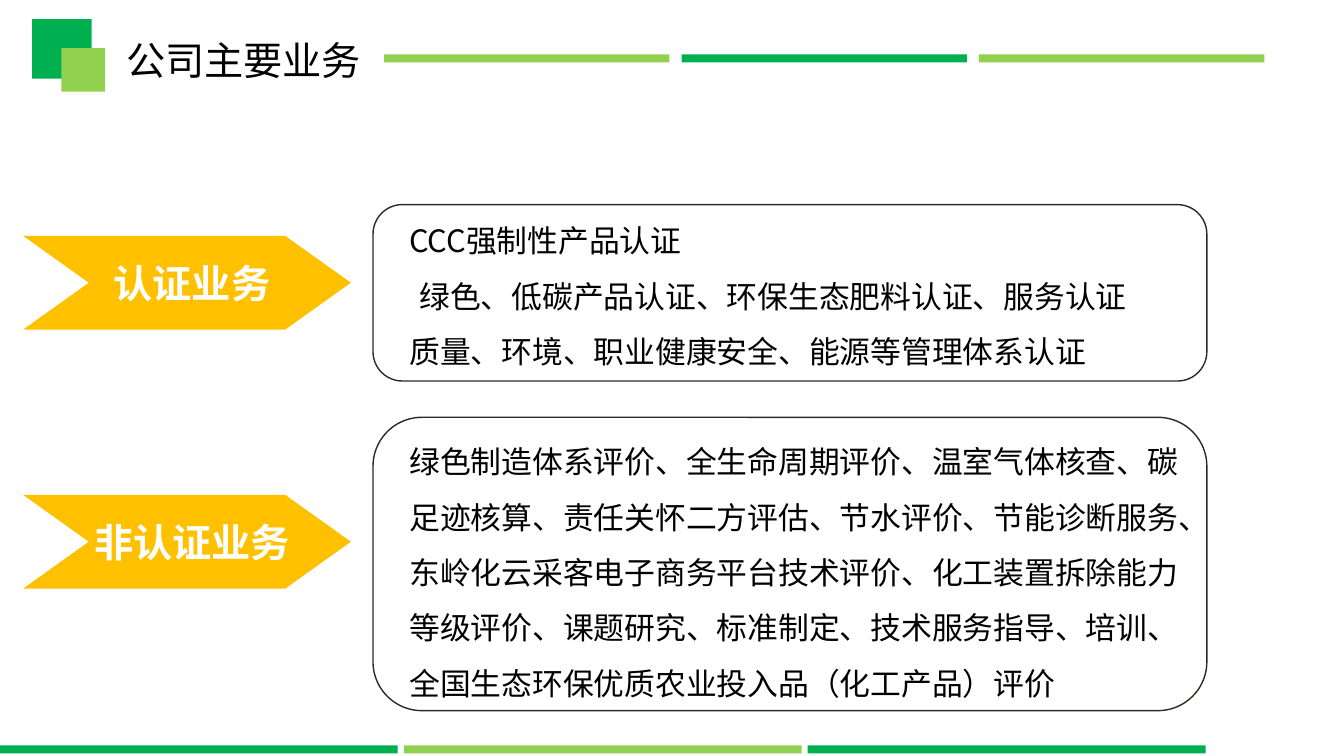
from dataclasses import dataclass

from lxml import etree
from pptx import Presentation
from pptx.dml.color import RGBColor
from pptx.enum.shapes import MSO_SHAPE
from pptx.enum.text import MSO_ANCHOR, MSO_AUTO_SIZE, PP_ALIGN
from pptx.oxml.ns import qn
from pptx.util import Inches, Pt

RECT, ROUNDED, CHEVRON = MSO_SHAPE.RECTANGLE, MSO_SHAPE.ROUNDED_RECTANGLE, MSO_SHAPE.CHEVRON
TOP, MIDDLE = MSO_ANCHOR.TOP, MSO_ANCHOR.MIDDLE
LEFT, CENTER = PP_ALIGN.LEFT, PP_ALIGN.CENTER
NO_FIT = MSO_AUTO_SIZE.NONE
SLIDE_W, SLIDE_H = 13.33, 7.5
TWO_CONTENT = 3


@dataclass(frozen=True)
class Theme:
    font: str = "Noto Sans CJK SC"
    dark_green: str = "00B050"
    light_green: str = "92D050"
    amber: str = "FFC000"
    white: str = "FFFFFF"
    ink: str = "000000"
    outline: str = "2C2A24"
    heading_size: int = 28
    body_size: int = 22
    line_spacing: float = 1.5


@dataclass(frozen=True)
class Box:
    left: float
    top: float
    width: float
    height: float

    def lengths(self):
        return [Inches(v) for v in (self.left, self.top, self.width, self.height)]


THEME = Theme()
# Each service: label, chevron top, card top and height, text top, lines with their indents
SERVICES = [
    ("认证业务", 2.34, 2.03, 1.75, 1.95, [
        ("CCC强制性产品认证", 0),
        ("绿色、低碳产品认证、环保生态肥料认证、服务认证", 0.1),
        ("质量、环境、职业健康安全、能源等管理体系认证", 0)]),
    ("非认证业务", 4.91, 4.14, 2.91, 4.14, [
        ("绿色制造体系评价、全生命周期评价、温室气体核查、碳足迹核算、责任关怀二方评估、"
         "节水评价、节能诊断服务、东岭化云采客电子商务平台技术评价、化工装置拆除能力等级评价、"
         "课题研究、标准制定、技术服务指导、培训、全国生态环保优质农业投入品（化工产品）评价", 0)]),
]


def add_block(slide, kind, box, fill, outline=None):
    block = slide.shapes.add_shape(kind, *box.lengths())
    block.shadow.inherit = False
    block.fill.solid()
    block.fill.fore_color.rgb = RGBColor.from_string(fill)
    if outline:
        block.line.color.rgb = RGBColor.from_string(outline)
        block.line.width = Pt(1)
    else:
        block.line.fill.background()
    return block


def place(placeholder, box):
    placeholder.left, placeholder.top, placeholder.width, placeholder.height = box.lengths()


def format_frame(frame, anchor, wrap, margins):
    frame.auto_size = NO_FIT
    frame.word_wrap = wrap
    frame.vertical_anchor = anchor
    (frame.margin_left, frame.margin_top,
     frame.margin_right, frame.margin_bottom) = [Inches(m) for m in margins]


def format_paragraph(paragraph, size, color, align, bold=False):
    paragraph.alignment = align
    for run in paragraph.runs:
        run.font.name = THEME.font
        run.font.size = Pt(size)
        run.font.bold = bold
        run.font.color.rgb = RGBColor.from_string(color)
        east_asian = etree.SubElement(run._r.get_or_add_rPr(), qn("a:ea"))
        east_asian.set("typeface", THEME.font)


def add_bars(slide, box, gap, colors):
    """Bars of equal width, side by side across the box."""
    width = (box.width - gap * (len(colors) - 1)) / len(colors)
    for i, color in enumerate(colors):
        bar = Box(box.left + i * (width + gap), box.top, width, box.height)
        add_block(slide, RECT, bar, color)


def add_header(slide, box):
    # Overlapping squares
    side = box.height
    add_block(slide, RECT, Box(box.left, box.top, 0.82 * side, 0.82 * side), THEME.dark_green)
    add_block(slide, RECT, Box(box.left + 0.4 * side, box.top + 0.4 * side,
                               0.6 * side, 0.6 * side), THEME.light_green)
    # Title
    title = slide.shapes.title
    place(title, Box(box.left + 0.8, box.top + 0.1, 2.6, 0.6))
    title.text_frame.text = "公司主要业务"
    format_frame(title.text_frame, MIDDLE, False, (0.13, 0.07, 0.13, 0.07))
    format_paragraph(title.text_frame.paragraphs[0], THEME.heading_size, THEME.ink, LEFT)
    # Rule beside the title
    rule = Box(box.left + 3.49, box.top + 0.35, box.width - 3.49, 0.08)
    add_bars(slide, rule, 0.12, [THEME.light_green, THEME.dark_green, THEME.light_green])


def add_label(slide, box, label):
    arrow = add_block(slide, CHEVRON, box, THEME.amber)
    arrow.adjustments[0] = 0.7
    arrow.text_frame.text = label
    format_frame(arrow.text_frame, MIDDLE, False, (0.1, 0, 0, 0))
    format_paragraph(arrow.text_frame.paragraphs[0], THEME.heading_size,
                     THEME.white, CENTER, bold=True)


def add_card(slide, body, box, text_top, lines):
    card = add_block(slide, ROUNDED, box, THEME.white, THEME.outline)
    body.element.addprevious(card.element)  # the card lies behind its text
    place(body, Box(box.left + 0.23, text_top, 0.96 * box.width, box.height))
    frame = body.text_frame
    frame.text = "\n".join(text for text, _ in lines)
    format_frame(frame, TOP, True, (0.13, 0.07, 0.13, 0.07))
    for paragraph, (_, indent) in zip(frame.paragraphs, lines):
        format_paragraph(paragraph, THEME.body_size, THEME.ink, LEFT)
        paragraph.line_spacing = THEME.line_spacing
        paragraph.space_before = Pt(0)
        properties = paragraph._p.get_or_add_pPr()
        properties.set("marL", str(Inches(indent)))
        properties.set("indent", "0")
        etree.SubElement(properties, qn("a:buNone"))


def main():
    deck = Presentation()
    deck.slide_width, deck.slide_height = Inches(SLIDE_W), Inches(SLIDE_H)
    slide = deck.slides.add_slide(deck.slide_layouts[TWO_CONTENT])

    add_header(slide, Box(0.32, 0.19, 12.22, 0.72))
    bodies = [slide.placeholders[1], slide.placeholders[2]]
    for body, service in zip(bodies, SERVICES):
        label, label_top, card_top, card_height, text_top, lines = service
        add_label(slide, Box(0.23, label_top, 3.25, 0.93), label)
        add_card(slide, body, Box(3.7, card_top, 8.27, card_height), text_top, lines)
    # Footer bars
    footer = Box(0, 0.986 * SLIDE_H, 0.897 * SLIDE_W, 0.08)
    add_bars(slide, footer, 0.06, [THEME.dark_green, THEME.light_green, THEME.dark_green])

    deck.save("out.pptx")


if __name__ == "__main__":
    main()
